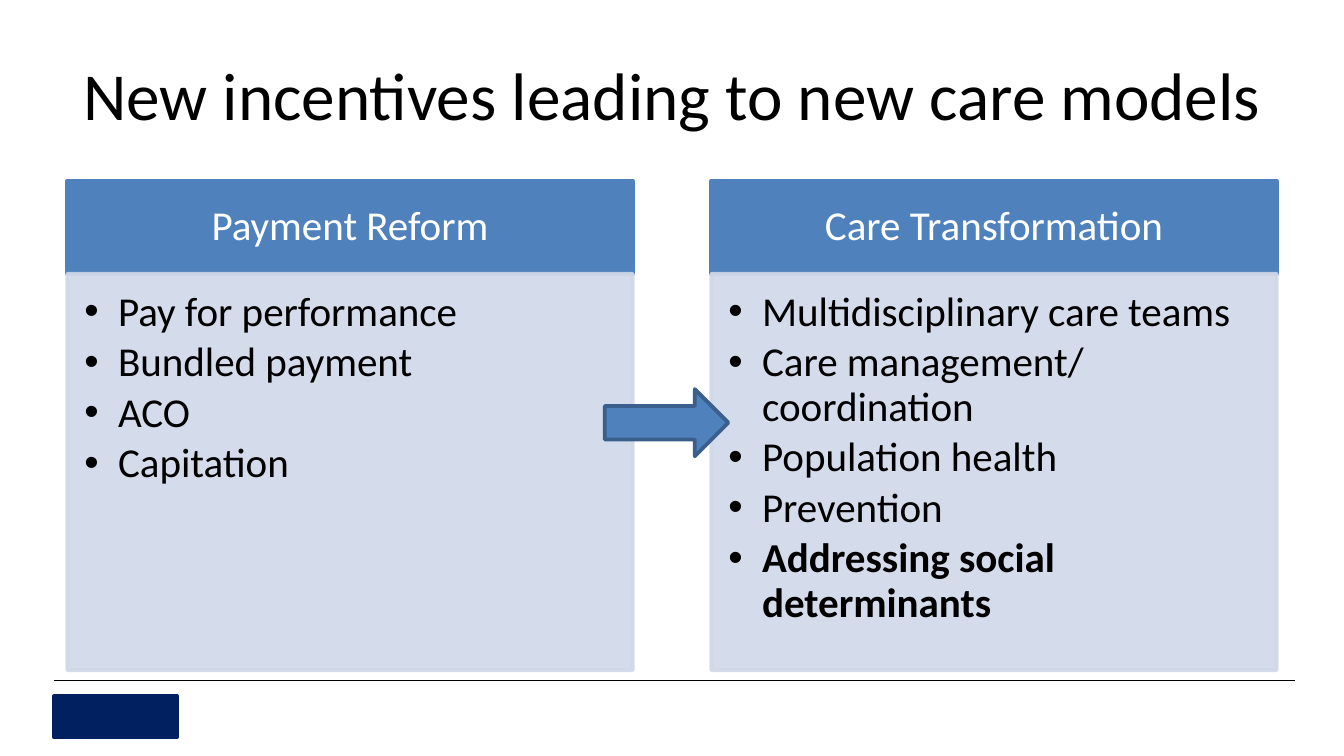
"""Build a slide that links payment reform to care transformation."""
from lxml import etree
from pptx import Presentation
from pptx import util as u
from pptx.dml.color import RGBColor
from pptx.enum import shapes, text
from pptx.oxml.ns import qn

COLORS = {"black": "000000", "white": "FFFFFF", "navy": "002060",
          "blue": "4F81BD", "outline": "3A5F8C", "panel": "D0D8E8"}


class SlideBuilder:
    def __init__(self, slide, font="Calibri", size=22):
        self.slide, self.font, self.size = slide, font, size

    def color(self, name):
        return RGBColor.from_string(COLORS[name])

    def style(self, paragraph, color, size=None, bold=False):
        paragraph.font.name = self.font
        paragraph.font.size = u.Pt(size or self.size)
        paragraph.font.color.rgb = self.color(color)
        paragraph.font.bold = bold

    def frame(self, shape, insets, anchor):
        frame = shape.text_frame
        frame.word_wrap = True
        frame.vertical_anchor = anchor
        (frame.margin_left, frame.margin_top,
         frame.margin_right, frame.margin_bottom) = map(u.Pt, insets)
        return frame

    def title(self, wording, box):
        shape = self.slide.shapes.title
        shape.left, shape.top, shape.width, shape.height = map(u.Pt, box)
        frame = self.frame(shape, (7.2, 3.6, 7.2, 3.6), text.MSO_ANCHOR.MIDDLE)
        frame.text = wording
        frame.paragraphs[0].alignment = text.PP_ALIGN.CENTER
        self.style(frame.paragraphs[0], "black", 36)

    def rule(self, left, right, top):
        line = self.slide.shapes.add_connector(
            shapes.MSO_CONNECTOR.STRAIGHT, *map(u.Pt, (left, top, right, top)))
        line.line.color.rgb = self.color("black")
        line.line.width = u.Pt(0.75)
        etree.SubElement(line._element.spPr, qn("a:effectLst"))

    def shape(self, kind, box, fill, line, opacity=100):
        shape = self.slide.shapes.add_shape(kind, *map(u.Pt, box))
        shape.shadow.inherit = False
        shape.fill.solid()
        shape.fill.fore_color.rgb = self.color(fill)
        shape.line.color.rgb = self.color(line)
        shape.line.width = u.Pt(2)
        if opacity < 100:
            for node in shape._element.spPr.iter(qn("a:srgbClr")):
                etree.SubElement(node, qn("a:alpha"), val=str(opacity * 1000))
        return shape

    def header(self, wording, box):
        shape = self.shape(shapes.MSO_SHAPE.RECTANGLE, box, "blue", "blue")
        frame = self.frame(shape, (12.3, 7, 12.3, 7), text.MSO_ANCHOR.MIDDLE)
        frame.text = wording
        paragraph = frame.paragraphs[0]
        paragraph.alignment = text.PP_ALIGN.CENTER
        paragraph.line_spacing = 0.9
        self.style(paragraph, "white")

    def bullets(self, items, box, bold_item):
        shape = self.shape(shapes.MSO_SHAPE.RECTANGLE, box, "panel", "panel", 90)
        frame = self.frame(shape, (9.24, 9.24, 12.3, 13.86), text.MSO_ANCHOR.TOP)
        frame.text = "\n".join(items)
        for paragraph, item in zip(frame.paragraphs, items):
            paragraph.alignment = text.PP_ALIGN.LEFT
            paragraph.line_spacing = 0.9
            paragraph.space_after = u.Pt(3.3)
            properties = paragraph._p.get_or_add_pPr()
            properties.set("marL", str(u.Pt(18)))
            properties.set("indent", str(-u.Pt(18)))
            etree.SubElement(properties, qn("a:buFont"), typeface="Arial")
            etree.SubElement(properties, qn("a:buChar"), char="•")
            self.style(paragraph, "black", bold=item == bold_item)


def main():
    presentation = Presentation()
    presentation.slide_width, presentation.slide_height = u.Pt(720), u.Pt(405)
    slide = presentation.slides.add_slide(presentation.slide_layouts[5])
    builder = SlideBuilder(slide)
    builder.rule(28.8, 694, 364.5)
    builder.shape(shapes.MSO_SHAPE.RECTANGLE, (29, 373, 66, 22), "navy", "navy")
    builder.title("New incentives leading to new care models", (36, 16.5, 648, 67.5))

    columns = {
        "Payment Reform": ["Pay for performance", "Bundled payment", "ACO", "Capitation"],
        "Care Transformation": [
            "Multidisciplinary care teams", "Care management/ coordination",
            "Population health", "Prevention", "Addressing social determinants"],
    }
    width, top, header_height, panel_height = 303, 97, 49.7, 212.4
    for index, (heading, items) in enumerate(columns.items()):
        left = 36 + index * 345
        builder.header(heading, (left, top, width, header_height))
        builder.bullets(items, (left, top + header_height, width, panel_height),
                        "Addressing social determinants")
    builder.shape(shapes.MSO_SHAPE.RIGHT_ARROW, (324, 208.5, 66.2, 36), "blue", "outline")
    presentation.save("out.pptx")


if __name__ == "__main__":
    main()
